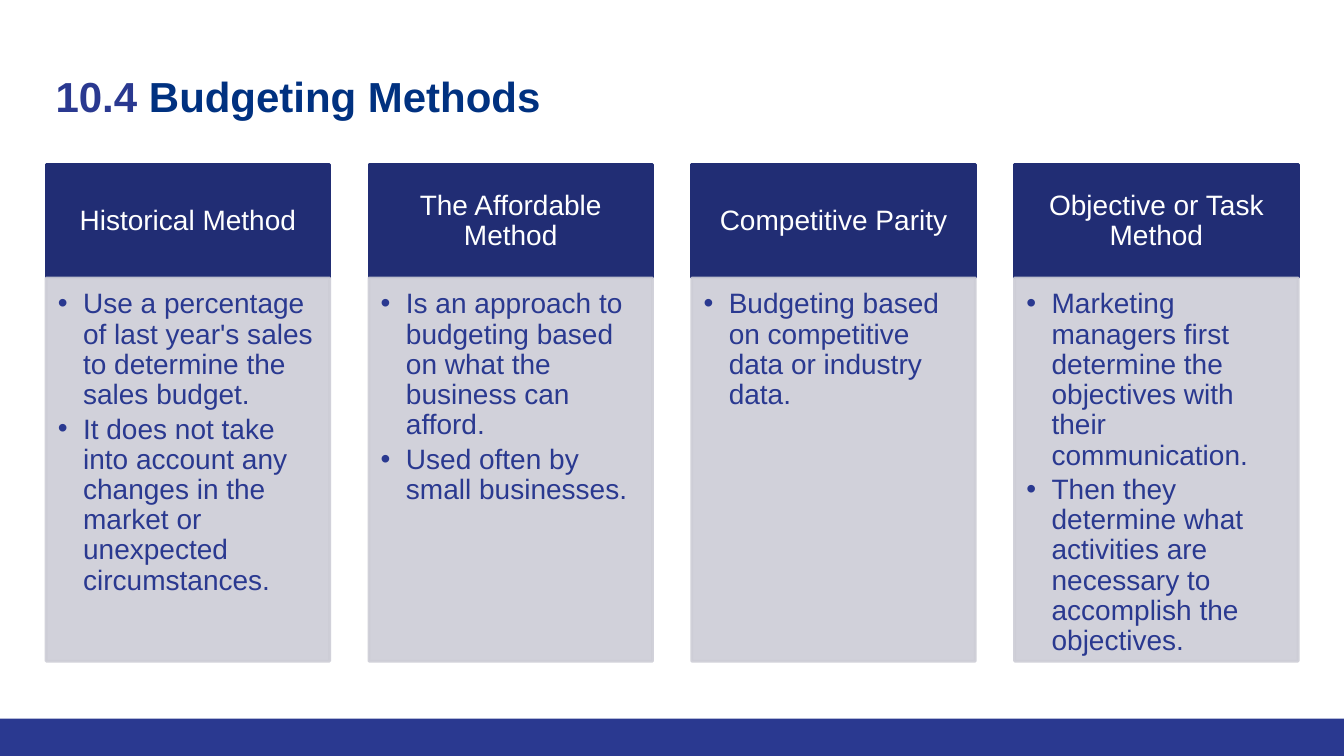
from lxml.etree import SubElement
from pptx import Presentation
from pptx.dml.color import RGBColor
from pptx.enum.shapes import MSO_SHAPE
from pptx.enum.text import MSO_ANCHOR, PP_ALIGN
from pptx.oxml.ns import qn
from pptx.util import Pt

INDIGO = RGBColor(0x2A, 0x39, 0x90)
NAVY = RGBColor(0x00, 0x31, 0x80)
HEADER_BLUE = RGBColor(0x21, 0x2D, 0x74)
PANEL_GREY = RGBColor(0xCD, 0xCD, 0xD6)
WHITE = RGBColor(0xFF, 0xFF, 0xFF)

METHODS = [
    ("Historical Method", [
        "Use a percentage of last year's sales to determine the sales budget.",
        "It does not take into account any changes in the market or unexpected circumstances.",
    ]),
    ("The Affordable Method", [
        "Is an approach to budgeting based on what the business can afford.",
        "Used often by small businesses.",
    ]),
    ("Competitive Parity", [
        "Budgeting based on competitive data or industry data.",
    ]),
    ("Objective or Task Method", [
        "Marketing managers first determine the objectives with their communication.",
        "Then they determine what activities are necessary to accomplish the objectives.",
    ]),
]


def write(paragraph, text, size=20, color=INDIGO, bold=False, align=PP_ALIGN.LEFT,
          line_spacing=None, after=0, bullet=False):
    paragraph.alignment = align
    paragraph.line_spacing = line_spacing
    paragraph.space_after = Pt(after)
    if bullet:
        properties = paragraph._p.get_or_add_pPr()
        properties.set("marL", str(Pt(18)))
        properties.set("indent", str(Pt(-18)))
        SubElement(properties, qn("a:buFont"), typeface="Arial")
        SubElement(properties, qn("a:buChar"), char="•")
    run = paragraph.add_run()
    run.text = text
    run.font.name = "Arial"
    run.font.size = Pt(size)
    run.font.bold = bold
    run.font.color.rgb = color


def add_block(left, top, width, height, color, margins=(0, 0, 0, 0),
              anchor=MSO_ANCHOR.TOP, outlined=True, opacity=100):
    block = slide.shapes.add_shape(
        MSO_SHAPE.RECTANGLE, Pt(left), Pt(top), Pt(width), Pt(height))
    block.shadow.inherit = False
    block.fill.solid()
    block.fill.fore_color.rgb = color
    if outlined:
        block.line.color.rgb = color
        block.line.width = Pt(2)
    else:
        block.line.fill.background()
    if opacity < 100:
        for tint in block._element.spPr.iter(qn("a:srgbClr")):
            SubElement(tint, qn("a:alpha"), val=str(opacity * 1000))
    frame = block.text_frame
    frame.word_wrap = True
    frame.vertical_anchor = anchor
    frame.margin_left, frame.margin_top, frame.margin_right, frame.margin_bottom = map(Pt, margins)
    return frame


presentation = Presentation()
presentation.slide_width = Pt(960)
presentation.slide_height = Pt(540)
slide = presentation.slides.add_slide(presentation.slide_layouts[6])

add_block(0, 513.4, 960, 26.6, INDIGO, outlined=False)

title = slide.shapes.add_textbox(Pt(32.6), Pt(43.2), Pt(894), Pt(64)).text_frame
title.word_wrap = True
title.margin_left = title.margin_top = title.margin_right = title.margin_bottom = Pt(7.2)
heading = title.paragraphs[0]
write(heading, "10.4 ", size=30, bold=True)
write(heading, "Budgeting Methods", size=30, color=NAVY, bold=True)

for column, (method, points) in enumerate(METHODS):
    left = 33 + column * 230.6
    header = add_block(left, 117.5, 202.5, 81, HEADER_BLUE,
                       margins=(11.2, 6.4, 11.2, 6.4), anchor=MSO_ANCHOR.MIDDLE)
    write(header.paragraphs[0], method, color=WHITE, align=PP_ALIGN.CENTER,
          line_spacing=0.9, after=7)

    panel = add_block(left, 198.5, 202.5, 273.8, PANEL_GREY,
                      margins=(8.4, 8.4, 11.2, 12.6), opacity=90)
    for number, point in enumerate(points):
        paragraph = panel.add_paragraph() if number else panel.paragraphs[0]
        write(paragraph, point, line_spacing=0.9, after=3, bullet=True)

presentation.save("out.pptx")
